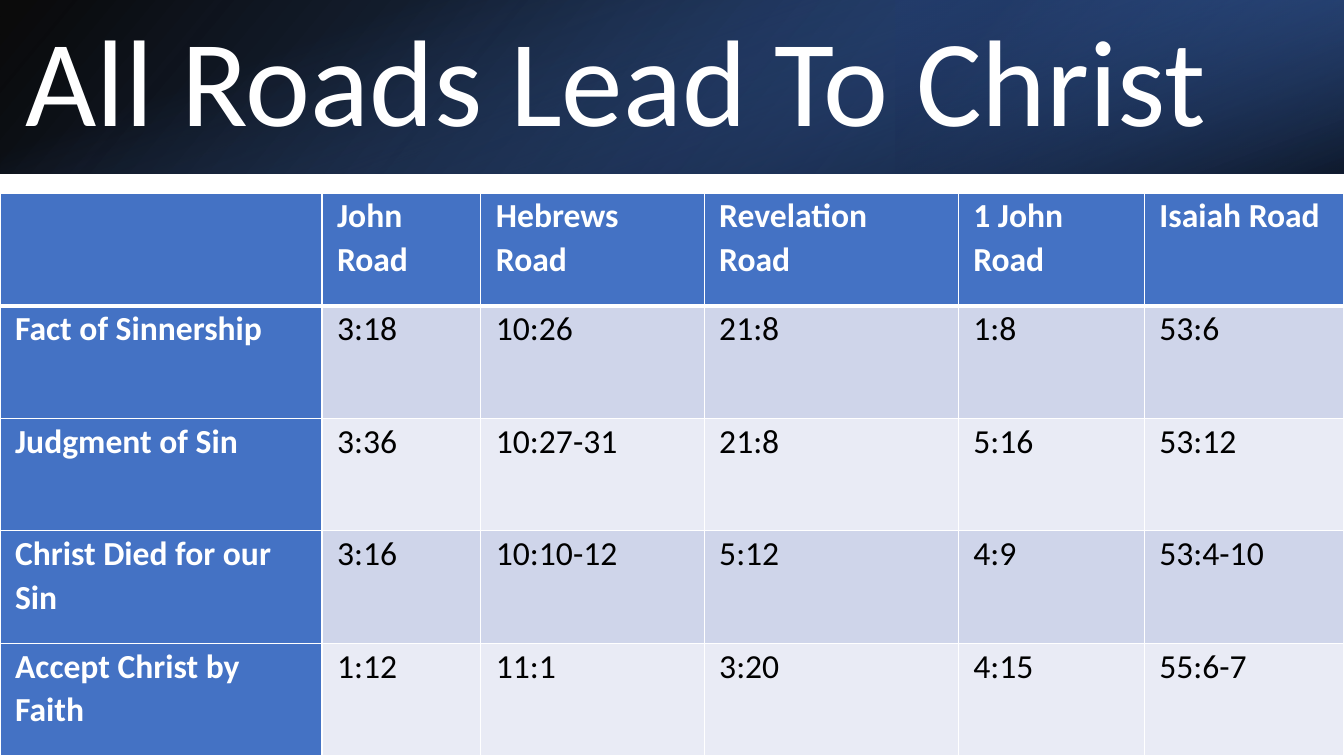
from lxml import etree
from pptx import Presentation
from pptx.dml.color import RGBColor
from pptx.enum.shapes import MSO_SHAPE
from pptx.enum.text import MSO_ANCHOR, PP_ALIGN
from pptx.oxml.ns import qn
from pptx.util import Pt

RECTANGLE = MSO_SHAPE.RECTANGLE
MIDDLE = MSO_ANCHOR.MIDDLE
CENTER = PP_ALIGN.CENTER

COLORS = {
    "white": "FFFFFF",
    "black": "000000",
    "blue": "4472C4",
    "medium blue": "2F5597",
    "dark blue": "203864",
    "odd row": "CFD5EA",
    "even row": "E9EBF5",
}
FONT = "Calibri"
PAGE_WIDTH, PAGE_HEIGHT = 960, 540
BANNER_HEIGHT = 124
TABLE_TOP = 138
COLUMN_WIDTHS = [230, 113.5, 159.5, 181.5, 133, 142.5]
ROWS = [
    ["", "John Road", "Hebrews Road", "Revelation Road", "1 John Road", "Isaiah Road"],
    ["Fact of Sinnership", "3:18", "10:26", "21:8", "1:8", "53:6"],
    ["Judgment of Sin", "3:36", "10:27-31", "21:8", "5:16", "53:12"],
    ["Christ Died for our Sin", "3:16", "10:10-12", "5:12", "4:9", "53:4-10"],
    ["Accept Christ by Faith", "1:12", "11:1", "3:20", "4:15", "55:6-7"],
]


def color(name):
    return RGBColor.from_string(COLORS[name])


def add_borders(cell, widths):
    """Draw white lines on the left, right, top and bottom of a cell."""
    properties = cell._tc.get_or_add_tcPr()
    for index, (side, width) in enumerate(zip("LRTB", widths)):
        line = etree.Element(qn(f"a:ln{side}"), w=str(Pt(width)))
        fill = etree.SubElement(line, qn("a:solidFill"))
        etree.SubElement(fill, qn("a:srgbClr"), val=COLORS["white"])
        properties.insert(index, line)


deck = Presentation()
deck.slide_width, deck.slide_height = Pt(PAGE_WIDTH), Pt(PAGE_HEIGHT)
page = deck.slides.add_slide(deck.slide_layouts[6])

# Banner layers: left, top, width, height, rotation, flipped, clockwise angle,
# then gradient stops as position, colour and opacity in percent
turn_offset = (PAGE_WIDTH - BANNER_HEIGHT) / 2
banner_layers = [
    (0, 0, PAGE_WIDTH, BANNER_HEIGHT, 0, True, 140,
     [(0, "black", 96), (100, "medium blue", 100)]),
    (PAGE_WIDTH * 2 / 3, 0, PAGE_WIDTH / 3, BANNER_HEIGHT, 180, True, 320,
     [(19, "dark blue", 68), (100, "blue", 79)]),
    (turn_offset, -turn_offset, BANNER_HEIGHT, PAGE_WIDTH, 90, False, 340,
     [(23, "blue", 0), (99, "black", 74)]),
]
for left, top, width, height, rotation, flipped, angle, stops in banner_layers:
    layer = page.shapes.add_shape(RECTANGLE, Pt(left), Pt(top), Pt(width), Pt(height))
    layer.shadow.inherit = False
    layer.rotation = rotation
    if flipped:
        layer._element.spPr.find(qn("a:xfrm")).set("flipH", "1")
    layer.fill.gradient()
    layer.fill.gradient_angle = 360 - angle
    for stop, (position, name, opacity) in zip(layer.fill.gradient_stops, stops):
        stop.position = position / 100
        stop.color.rgb = color(name)
    stop_colors = layer._element.spPr.iter(qn("a:srgbClr"))
    for stop_color, (position, name, opacity) in zip(stop_colors, stops):
        etree.SubElement(stop_color, qn("a:alpha"), val=str(opacity * 1000))
    layer.line.fill.background()

title = page.shapes.add_textbox(0, 0, Pt(PAGE_WIDTH), Pt(BANNER_HEIGHT))
frame = title.text_frame
frame.word_wrap = True
frame.vertical_anchor = MIDDLE
frame.margin_left, frame.margin_right = Pt(7), Pt(87)
frame.text = "All Roads Lead To Christ"
para = frame.paragraphs[0]
para.alignment = CENTER
para.line_spacing = 0.9
span = para.runs[0]
span.font.name = FONT
span.font.size = Pt(88)
span.font.color.rgb = color("white")

table_height = PAGE_HEIGHT - TABLE_TOP
table = page.shapes.add_table(
    len(ROWS), len(COLUMN_WIDTHS), 0, Pt(TABLE_TOP), Pt(PAGE_WIDTH), Pt(table_height)
).table
for column, width in zip(table.columns, COLUMN_WIDTHS):
    column.width = Pt(width)
for row_index, texts in enumerate(ROWS):
    table.rows[row_index].height = Pt(table_height / len(ROWS))
    band = "odd row" if row_index % 2 else "even row"
    for column_index, text in enumerate(texts):
        heading = row_index == 0 or column_index == 0
        cell = table.cell(row_index, column_index)
        cell.margin_left = cell.margin_right = Pt(10.8)
        cell.margin_top = cell.margin_bottom = 0
        cell.fill.solid()
        cell.fill.fore_color.rgb = color("blue" if heading else band)
        add_borders(cell, (1, 1, 3 if row_index == 1 else 1, 3 if row_index == 0 else 1))
        cell.text_frame.text = text
        para = cell.text_frame.paragraphs[0]
        para.line_spacing = 1.07
        for span in para.runs:
            span.font.name = FONT
            span.font.size = Pt(24)
            span.font.bold = heading
            span.font.color.rgb = color("white" if heading else "black")

deck.save("out.pptx")
